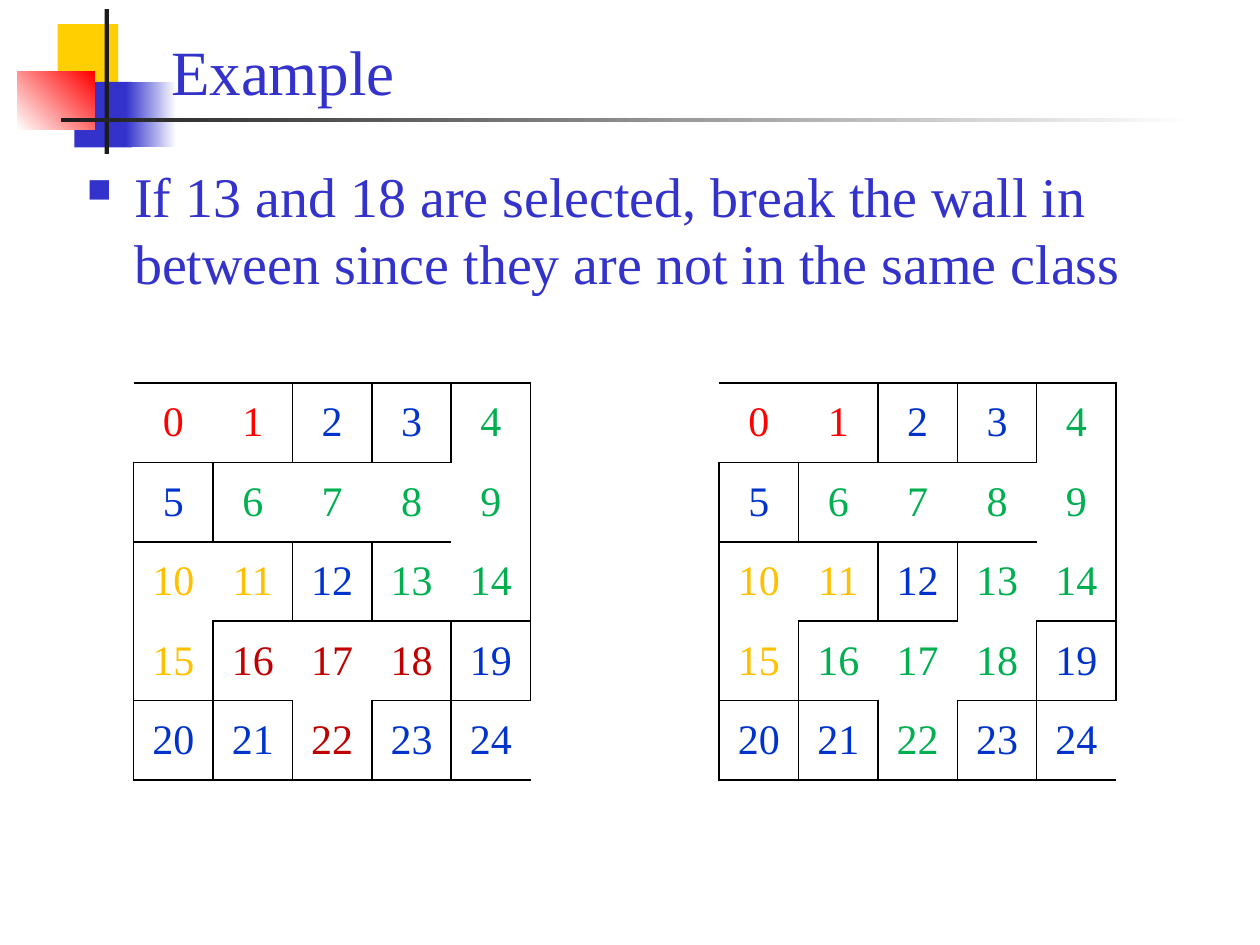
from dataclasses import dataclass

from lxml import etree
from pptx import Presentation
from pptx.dml.color import RGBColor
from pptx.enum import shapes, text
from pptx.oxml import ns
from pptx.util import Pt


@dataclass(frozen=True)
class Theme:
    font: str = "Times New Roman"
    title_size: int = 36
    body_size: int = 32
    cell_size: int = 24
    ink: str = "3333CC"
    dark: str = "1C1C1C"
    yellow: str = "FFCF01"
    red: str = "FF0000"
    white: str = "FFFFFF"
    wall: str = "000000"
    single: str = "0033CC"
    green: str = "00B050"
    amber: str = "FFC000"
    maroon: str = "C00000"


THEME = Theme()
SIDE = 5
CELL = 45.36
MAZE_TOP = 218.9
CLASS_COLOURS = {0: THEME.red, 4: THEME.green, 10: THEME.amber, 16: THEME.maroon}
PASSAGES = {(0, 1), (4, 9), (6, 7), (7, 8), (8, 9), (9, 14), (13, 14),
            (10, 11), (10, 15), (16, 17), (17, 18), (17, 22)}
NEW_PASSAGE = (13, 18)
DOORS = {(0, "L"), (SIDE * SIDE - 1, "R")}


def style(paragraph, size, colour):
    paragraph.font.name = THEME.font
    paragraph.font.size = Pt(size)
    paragraph.font.color.rgb = RGBColor.from_string(colour)


def add_block(slide, box, colours, angle=0):
    block = slide.shapes.add_shape(shapes.MSO_SHAPE.RECTANGLE, *map(Pt, box))
    block.shadow.inherit = False
    block.line.fill.background()
    if len(colours) == 1:
        block.fill.solid()
        block.fill.fore_color.rgb = RGBColor.from_string(colours[0])
        return
    block.fill.gradient()
    block.fill.gradient_angle = angle
    for stop, colour in zip(block.fill.gradient_stops, colours):
        stop.color.rgb = RGBColor.from_string(colour)


def add_text(slide, box, words, size, anchor):
    frame = slide.shapes.add_textbox(*map(Pt, box)).text_frame
    frame.word_wrap = True
    frame.vertical_anchor = anchor
    paragraph = frame.paragraphs[0]
    paragraph.text = words
    style(paragraph, size, THEME.ink)
    return paragraph


def add_bullet(paragraph):
    paragraph.space_before = Pt(6.4)
    properties = paragraph._p.get_or_add_pPr()
    properties.set("marL", str(Pt(27)))
    properties.set("indent", str(Pt(-27)))
    bullet = [etree.Element(ns.qn(f"a:{tag}")) for tag in ("buClr", "buSzPct", "buChar")]
    etree.SubElement(bullet[0], ns.qn("a:srgbClr"), val=THEME.ink)
    bullet[1].set("val", "60000")
    bullet[2].set("char", "■")
    following = properties.find(ns.qn("a:defRPr"))
    for part in bullet:
        following.addprevious(part)


def find_classes(passages):
    classes = list(range(SIDE * SIDE))
    for first, second in passages:
        joined = {classes[first], classes[second]}
        classes = [min(joined) if c in joined else c for c in classes]
    return classes


def find_walls(number, passages):
    row, column = divmod(number, SIDE)
    steps = {"L": (0, -1), "R": (0, 1), "T": (-1, 0), "B": (1, 0)}
    walls = {}
    for side, (down, right) in steps.items():
        beside = (row + down, column + right)
        if all(0 <= place < SIDE for place in beside):
            neighbour = beside[0] * SIDE + beside[1]
            walls[side] = tuple(sorted((number, neighbour))) not in passages
        else:
            walls[side] = (number, side) not in DOORS
    return walls


def draw_walls(cell, walls):
    properties = cell._tc.get_or_add_tcPr()
    for position, (side, closed) in enumerate(walls.items()):
        edge = etree.Element(ns.qn(f"a:ln{side}"), w=str(Pt(1)))
        if closed:
            fill = etree.SubElement(edge, ns.qn("a:solidFill"))
            etree.SubElement(fill, ns.qn("a:srgbClr"), val=THEME.wall)
        else:
            etree.SubElement(edge, ns.qn("a:noFill"))
        properties.insert(position, edge)


def add_maze(slide, left, passages):
    size = Pt(CELL * SIDE)
    maze = slide.shapes.add_table(SIDE, SIDE, Pt(left), Pt(MAZE_TOP), size, size).table
    maze.first_row = False
    maze.horz_banding = False
    for band in (*maze.rows, *maze.columns):
        if hasattr(band, "height"):
            band.height = Pt(CELL)
        else:
            band.width = Pt(CELL)
    for number, group in enumerate(find_classes(passages)):
        cell = maze.cell(*divmod(number, SIDE))
        cell.fill.background()
        cell.vertical_anchor = text.MSO_ANCHOR.MIDDLE
        paragraph = cell.text_frame.paragraphs[0]
        paragraph.text = str(number)
        paragraph.alignment = text.PP_ALIGN.CENTER
        style(paragraph, THEME.cell_size, CLASS_COLOURS.get(group, THEME.single))
        draw_walls(cell, find_walls(number, passages))


def add_ornament(slide):
    add_block(slide, (33, 13.8, 34.5, 37.5), [THEME.yellow])
    add_block(slide, (42.5, 46.8, 33, 37.5), [THEME.ink])
    add_block(slide, (72, 46.8, 28.8, 37.5), [THEME.ink, THEME.white])
    add_block(slide, (10, 41, 44, 33.2), [THEME.white, THEME.red], 45)
    add_block(slide, (59.8, 5.2, 2.4, 82.8), [THEME.dark])
    add_block(slide, (34.6, 67.5, 648, 2.4), [THEME.dark, THEME.white])


def main():
    deck = Presentation()
    deck.slide_width, deck.slide_height = Pt(720), Pt(540)
    slide = deck.slides.add_slide(deck.slide_layouts[6])
    add_ornament(slide)
    add_text(slide, (90.7, 11.5, 613.4, 54), "Example",
             THEME.title_size, text.MSO_ANCHOR.BOTTOM)
    statement = add_text(
        slide, (42.5, 88.6, 658, 430.6),
        "If 13 and 18 are selected, break the wall in between "
        "since they are not in the same class",
        THEME.body_size, text.MSO_ANCHOR.TOP)
    add_bullet(statement)
    add_maze(slide, 411, PASSAGES | {NEW_PASSAGE})
    add_maze(slide, 76.4, PASSAGES)
    deck.save("out.pptx")


if __name__ == "__main__":
    main()
